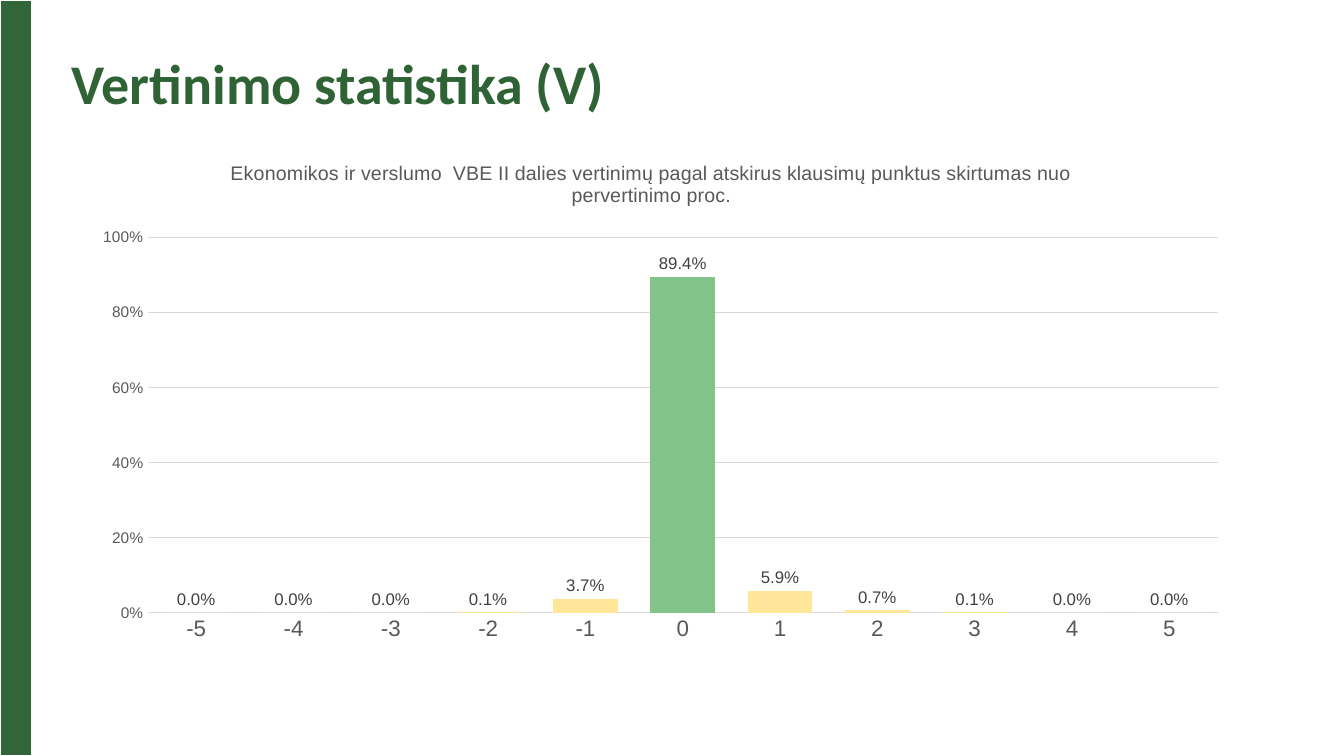
import pptx
import pptx.util
import pptx.dml.color
import pptx.chart.data
import pptx.enum.chart
import pptx.enum.text
import pptx.oxml
import pptx.oxml.ns

Inches = pptx.util.Inches
Pt = pptx.util.Pt
kinds = pptx.enum.chart
colors = {
    "band": "316738",
    "title": "2F6335",
    "grey": "595959",
    "label": "404040",
    "grid": "D9D9D9",
    "bar": "FFE699",
    "peak": "83C48B",
}


def tint(name):
    return pptx.dml.color.RGBColor.from_string(colors[name])


def style(font, face, size, name, bold=False):
    font.name = face
    font.size = Pt(size)
    font.bold = bold
    font.color.rgb = tint(name)


deck = pptx.Presentation()
deck.slide_width = Inches(13.33)
deck.slide_height = Inches(7.5)
slide = deck.slides.add_slide(deck.slide_layouts[5])

band = slide.shapes.add_table(1, 1, 0, 0, Inches(0.31), Inches(7.5)).table
band.first_row = False
band.horz_banding = False
cell = band.cell(0, 0)
cell.fill.solid()
cell.fill.fore_color.rgb = tint("band")

title = slide.shapes.title
title.left, title.top = Inches(0.61), Inches(0.13)
title.width, title.height = Inches(11.5), Inches(1.45)
frame = title.text_frame
frame.word_wrap = True
frame.vertical_anchor = pptx.enum.text.MSO_ANCHOR.MIDDLE
para = frame.paragraphs[0]
para.alignment = pptx.enum.text.PP_ALIGN.LEFT
para.line_spacing = 0.9
run = para.add_run()
run.text = "Vertinimo statistika (V)"
style(run.font, "Calibri", 40, "title", True)

data = pptx.chart.data.CategoryChartData(number_format="0.0%")
data.categories = [str(step) for step in range(-5, 6)]
data.add_series("Series 1", [0, 0, 0, 0.001, 0.037, 0.894, 0.059, 0.007, 0.001, 0, 0])
chart = slide.shapes.add_chart(
    kinds.XL_CHART_TYPE.COLUMN_CLUSTERED,
    Inches(0.69), Inches(1.4), Inches(11.54), Inches(5.29), data,
).chart
chart.has_legend = False
chart.font.name = "Arial"
chart.font.size = Pt(10)

chart.has_title = True
chart.chart_title.include_in_layout = False
run = chart.chart_title.text_frame.paragraphs[0].add_run()
run.text = (
    "Ekonomikos ir verslumo  VBE II dalies vertinimų pagal atskirus "
    "klausimų punktus skirtumas nuo pervertinimo proc."
)
style(run.font, "Arial", 14, "grey")

xaxis, yaxis = chart.category_axis, chart.value_axis
for axis, size in ((xaxis, 16), (yaxis, 11)):
    axis.major_tick_mark = kinds.XL_TICK_MARK.NONE
    axis.minor_tick_mark = kinds.XL_TICK_MARK.NONE
    style(axis.tick_labels.font, "Arial", size, "grey")

yaxis.minimum_scale = 0
yaxis.maximum_scale = 1
yaxis.major_unit = 0.2
yaxis.tick_labels.number_format = "0%"
yaxis.tick_labels.number_format_is_linked = False
yaxis.format.line.fill.background()
yaxis.has_major_gridlines = True
for line in (xaxis.format.line, yaxis.major_gridlines.format.line):
    line.color.rgb = tint("grid")
    line.width = Pt(0.75)

plot = chart.plots[0]
plot.gap_width = 50
plot.overlap = -27
plot.vary_by_categories = False
bars = plot.series[0]
bars.invert_if_negative = False
for part, name in ((bars, "bar"), (bars.points[5], "peak")):
    part.format.fill.solid()
    part.format.fill.fore_color.rgb = tint(name)

labels = bars.data_labels
labels.show_value = True
labels.number_format = "0.0%"
labels.number_format_is_linked = False
labels.position = kinds.XL_LABEL_POSITION.OUTSIDE_END
style(labels.font, "Arial", 12, "label")

area = chart._chartSpace.chart.plotArea
for old in area.findall(pptx.oxml.ns.qn("c:layout")):
    area.remove(old)
sides = "".join(
    f'<c:{tag} val="{val}"/>'
    for tag, val in (
        ("layoutTarget", "inner"), ("xMode", "edge"), ("yMode", "edge"),
        ("x", 0.067), ("y", 0.18), ("w", 0.92), ("h", 0.705),
    )
)
area.insert(0, pptx.oxml.parse_xml(
    f'<c:layout {pptx.oxml.ns.nsdecls("c")}>'
    f"<c:manualLayout>{sides}</c:manualLayout></c:layout>"
))

deck.save("out.pptx")
